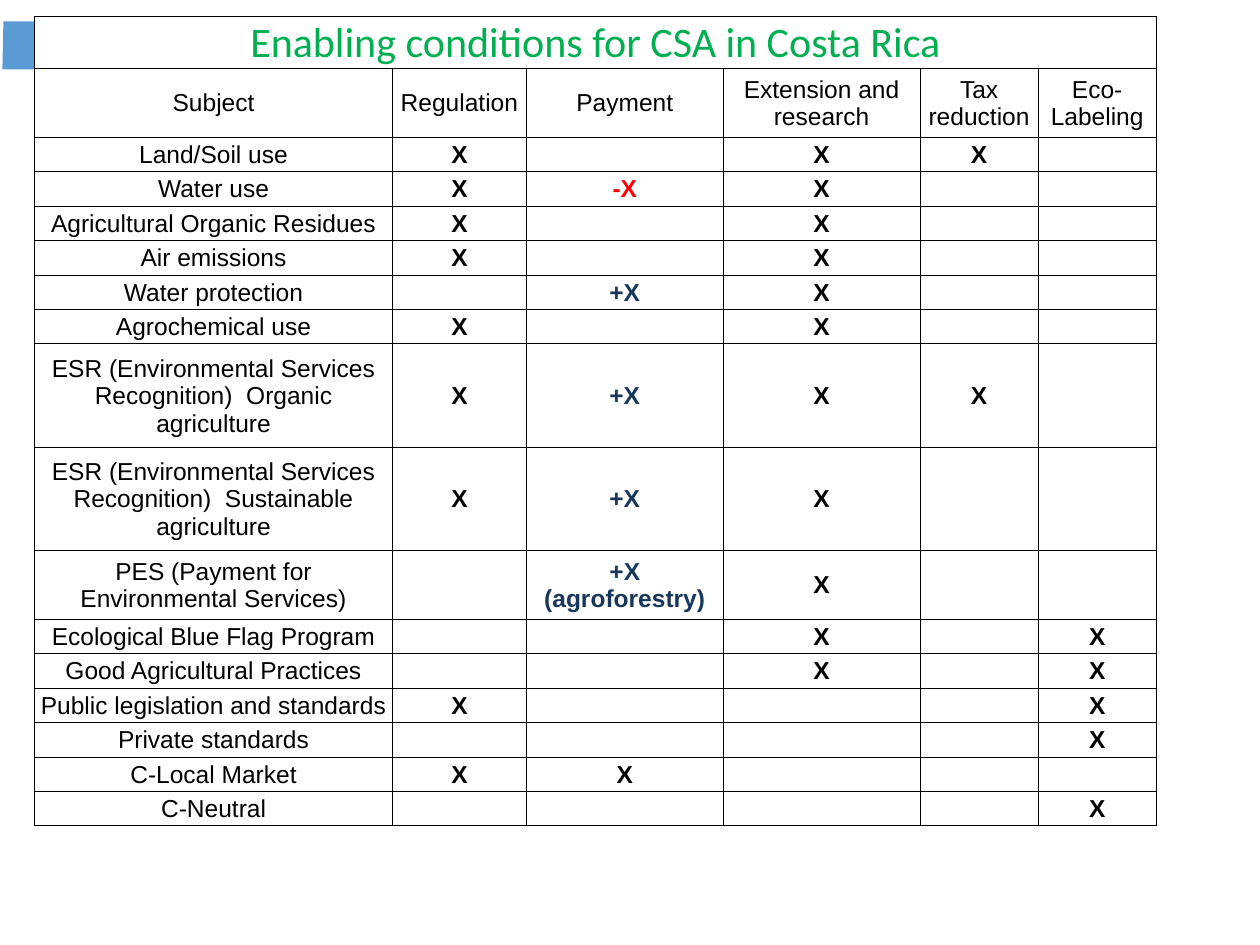
from dataclasses import dataclass

import lxml.etree
import pptx
import pptx.dml.color
import pptx.enum.text
import pptx.oxml.ns
import pptx.slide
import pptx.table
import pptx.util

Pt = pptx.util.Pt
RGBColor = pptx.dml.color.RGBColor
ANCHOR = pptx.enum.text.MSO_ANCHOR
qn = pptx.oxml.ns.qn

WHITE = RGBColor(0xFF, 0xFF, 0xFF)
BLACK = RGBColor(0, 0, 0)
GREEN = RGBColor(0x00, 0xB0, 0x50)
RED = RGBColor(0xFF, 0, 0)
NAVY = RGBColor(0x17, 0x37, 0x5D)
BLUE = RGBColor(0x5B, 0x9B, 0xD5)
SIGN_COLORS = {"+": NAVY, "-": RED}

TITLE = "Enabling conditions for CSA in Costa Rica"
LINE_HEIGHT = 19.68
COL_WIDTHS = (204.5, 76.5, 112.5, 112.5, 67.5, 67.5)
TAB_POINTS = ((1.4, 39.6), (2, 12.2), (51.6, 12.2), (60.8, 26), (51.6, 39.6))


@dataclass
class Style:
    size: float = 14
    font: str = "Arial"
    color: RGBColor = BLACK
    bold: bool = False
    anchor: ANCHOR = ANCHOR.MIDDLE


@dataclass
class Subject:
    name: str
    regulation: str = ""
    payment: str = ""
    extension: str = ""
    tax: str = ""
    label: str = ""
    lines: int = 1

    def marks(self) -> tuple[str, ...]:
        return self.regulation, self.payment, self.extension, self.tax, self.label


HEADER = Subject("Subject", "Regulation", "Payment", "Extension and research",
                 "Tax reduction", "Eco-Labeling", lines=2)
SUBJECTS = (
    Subject("Land/Soil use", regulation="X", extension="X", tax="X"),
    Subject("Water use", regulation="X", payment="-X", extension="X"),
    Subject("Agricultural Organic Residues", regulation="X", extension="X"),
    Subject("Air emissions", regulation="X", extension="X"),
    Subject("Water protection", payment="+X", extension="X"),
    Subject("Agrochemical use", regulation="X", extension="X"),
    Subject("ESR (Environmental Services Recognition)  Organic agriculture",
            regulation="X", payment="+X", extension="X", tax="X", lines=3),
    Subject("ESR (Environmental Services Recognition)  Sustainable agriculture",
            regulation="X", payment="+X", extension="X", lines=3),
    Subject("PES (Payment for Environmental Services)",
            payment="+X (agroforestry)", extension="X", lines=2),
    Subject("Ecological Blue Flag Program", extension="X", label="X"),
    Subject("Good Agricultural Practices", extension="X", label="X"),
    Subject("Public legislation and standards", regulation="X", label="X"),
    Subject("Private standards", label="X"),
    Subject("C-Local Market", regulation="X", payment="X"),
    Subject("C-Neutral", label="X"),
)


def add_borders(cell: pptx.table._Cell) -> None:
    tc_pr = cell._tc.get_or_add_tcPr()
    for side in ("lnL", "lnR", "lnT", "lnB"):
        ln = lxml.etree.SubElement(tc_pr, qn(f"a:{side}"), w=str(Pt(0.5)))
        fill = lxml.etree.SubElement(ln, qn("a:solidFill"))
        lxml.etree.SubElement(fill, qn("a:srgbClr"), val=str(BLACK))


def fill_cell(cell: pptx.table._Cell, text: str, style: Style) -> None:
    add_borders(cell)
    cell.fill.solid()
    cell.fill.fore_color.rgb = WHITE
    cell.margin_left = cell.margin_right = cell.margin_top = Pt(0.6)
    cell.margin_bottom = 0
    cell.vertical_anchor = style.anchor
    p = cell.text_frame.paragraphs[0]
    p.text = text
    p.alignment = pptx.enum.text.PP_ALIGN.CENTER
    p._p.get_or_add_endParaRPr().set("sz", str(int(style.size * 100)))
    for r in p.runs:
        r.font.size = Pt(style.size)
        r.font.name = style.font
        r.font.bold = style.bold
        r.font.color.rgb = style.color


def add_side_tab(s: pptx.slide.Slide) -> None:
    start, *rest = [(Pt(x), Pt(y)) for x, y in TAB_POINTS]
    builder = s.shapes.build_freeform(*start)
    builder.add_line_segments(rest, close=True)
    sp = builder.convert_to_shape()
    sp.shadow.inherit = False
    sp.fill.solid()
    sp.fill.fore_color.rgb = BLUE
    sp.line.fill.background()


def add_conditions_table(s: pptx.slide.Slide) -> None:
    rows = (Subject(TITLE), HEADER, *SUBJECTS)
    height = LINE_HEIGHT * sum(row.lines for row in rows)
    frame = s.shapes.add_table(len(rows), len(COL_WIDTHS), Pt(19.8), Pt(9.2),
                               Pt(sum(COL_WIDTHS)), Pt(height))
    table = frame.table
    table.first_row = table.horz_banding = False
    for column, width in zip(table.columns, COL_WIDTHS):
        column.width = Pt(width)
    for i, row in enumerate(rows):
        table.rows[i].height = Pt(LINE_HEIGHT * row.lines)
        for j, text in enumerate((row.name, *row.marks())):
            style = Style(color=SIGN_COLORS.get(text[:1], BLACK), bold=i > 1 and j > 0)
            if i == 0:
                style = Style(24, "Calibri", GREEN, anchor=ANCHOR.BOTTOM)
            fill_cell(table.cell(i, j), text, style)
    table.cell(0, 0).merge(table.cell(0, len(COL_WIDTHS) - 1))


def main() -> None:
    prs = pptx.Presentation()
    prs.slide_width, prs.slide_height = Pt(720), Pt(540)
    s = prs.slides.add_slide(prs.slide_layouts[6])
    add_side_tab(s)
    add_conditions_table(s)
    prs.save("out.pptx")


if __name__ == "__main__":
    main()
